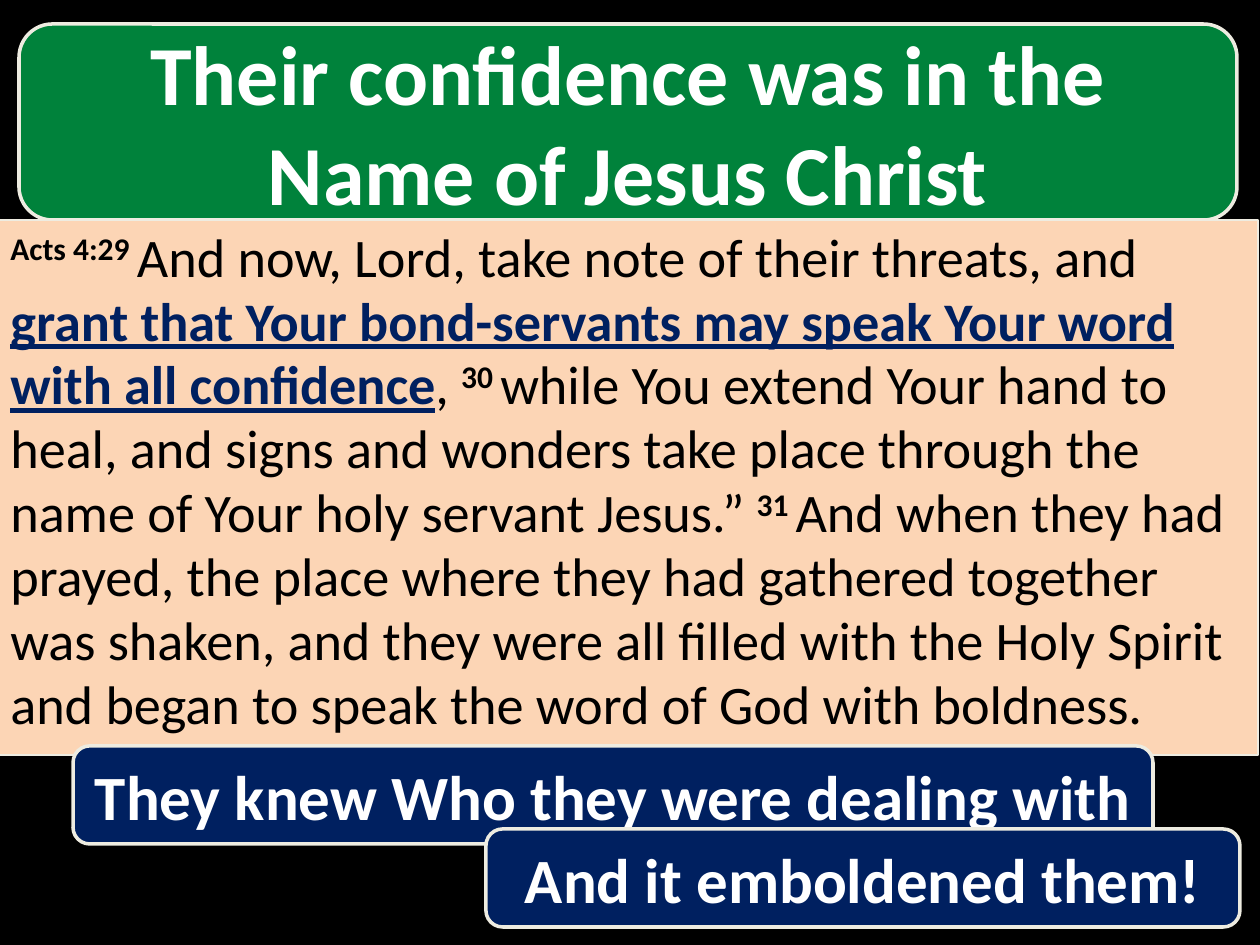
from pptx import Presentation
from pptx.dml.color import RGBColor
from pptx.enum.shapes import MSO_SHAPE as Kind
from pptx.enum.text import MSO_ANCHOR as Anchor, PP_ALIGN as Align
from pptx.util import Pt

PX = 914400 / 126
NAVY, CREAM, BLACK = "002060", "EEECE1", "000000"


def color(code):
    return RGBColor.from_string(code)


def panel(kind, box, fill, edge):
    shape = slide.shapes.add_shape(kind, *[round(n * PX) for n in box])
    shape.shadow.inherit = False
    shape.fill.solid()
    shape.fill.fore_color.rgb = color(fill)
    shape.line.color.rgb = color(CREAM)
    shape.line.width = Pt(edge)
    shape.text_frame.word_wrap = True
    return shape


prs = Presentation()
prs.slide_width, prs.slide_height = round(1260 * PX), round(945 * PX)
slide = prs.slides.add_slide(prs.slide_layouts[6])
slide.background.fill.solid()
slide.background.fill.fore_color.rgb = color(BLACK)

verses = [
    ("Acts 4:29 ", "verse"),
    ("And now, Lord, take note of their threats, and ", "plain"),
    ("grant that Your bond-servants may speak Your word with all confidence", "key"),
    (", ", "plain"),
    ("30 ", "verse"),
    ("while You extend Your hand to heal, and signs and wonders take place "
     "through the name of Your holy servant Jesus.” ", "plain"),
    ("31 ", "verse"),
    ("And when they had prayed, the place where they had gathered together "
     "was shaken, and they were all filled with the Holy Spirit "
     "and began to speak the word of God with boldness.", "plain"),
]
banners = [
    ("Their confidence was in the Name of Jesus Christ", (19, 24, 1218, 196), "00823B", 48),
    ("They knew Who they were dealing with", (73, 746, 1080, 98), NAVY, 36),
    ("And it emboldened them!", (486, 829, 754, 98), NAVY, 36),
]

for i, (text, box, fill, size) in enumerate(banners):
    shape = panel(Kind.ROUNDED_RECTANGULAR_CALLOUT, box, fill, 2)
    for n, value in enumerate((-0.22, 0.5, 0.17)):
        shape.adjustments[n] = value
    shape.text_frame.vertical_anchor = Anchor.MIDDLE
    para = shape.text_frame.paragraphs[0]
    para.text = text
    para.alignment = Align.CENTER
    font = para.font
    font.name, font.size, font.bold = "Calibri", Pt(size), True
    font.color.rgb = color("FFFFFF")

    if i == 0:
        body = panel(Kind.RECTANGLE, (-2, 220, 1260, 535), "FCD5B5", 0.75)
        body.text_frame.vertical_anchor = Anchor.TOP
        para = body.text_frame.paragraphs[0]
        para.alignment = Align.LEFT
        para.line_spacing = 0.98
        para.font.name, para.font.size = "Calibri", Pt(31)
        for words, style in verses:
            run = para.add_run()
            run.text = words
            run.font.bold = style != "plain"
            run.font.underline = style == "key"
            run.font.color.rgb = color(NAVY if style == "key" else BLACK)
            if style == "verse":
                run.font._element.set("baseline", "30000")

prs.save("out.pptx")
